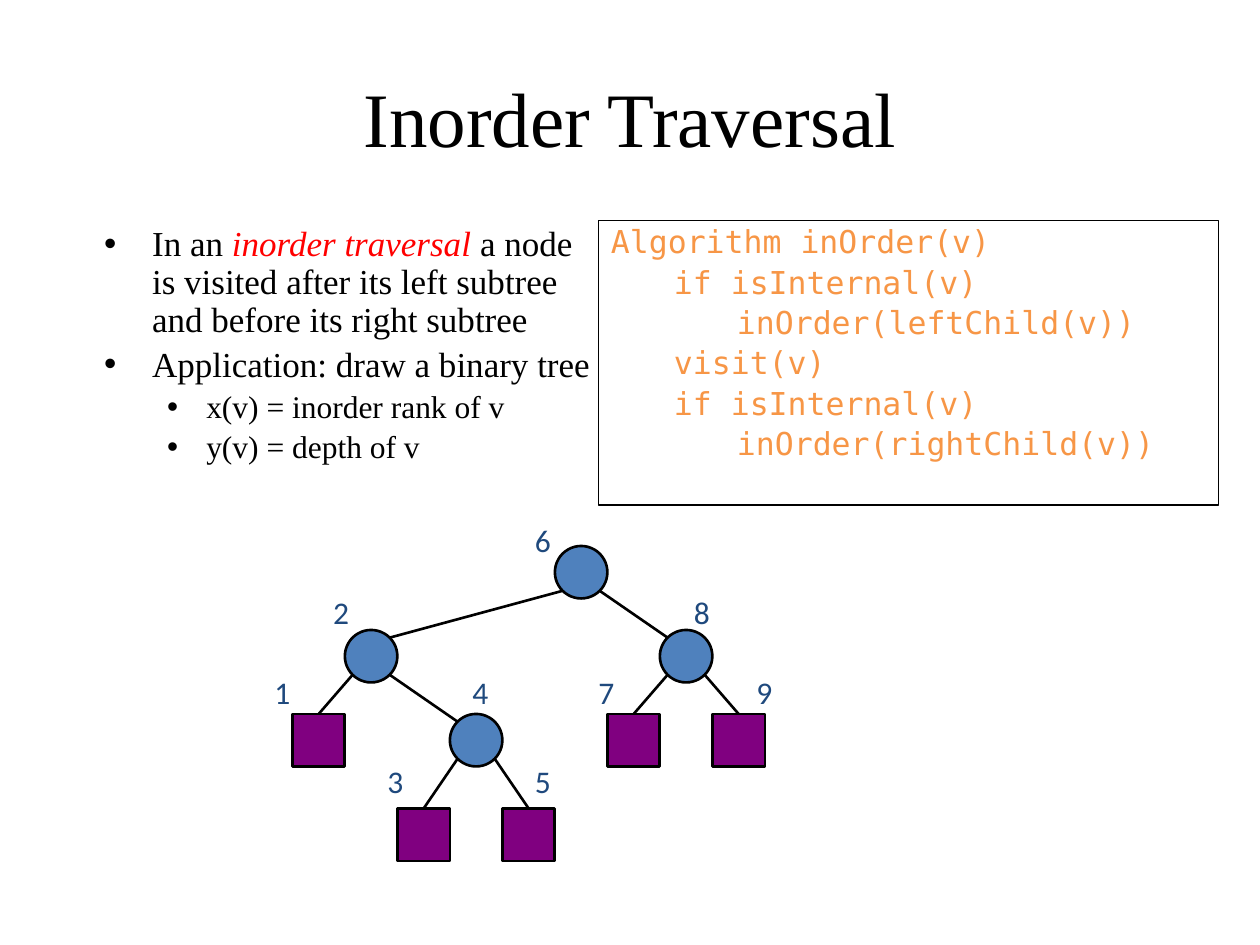
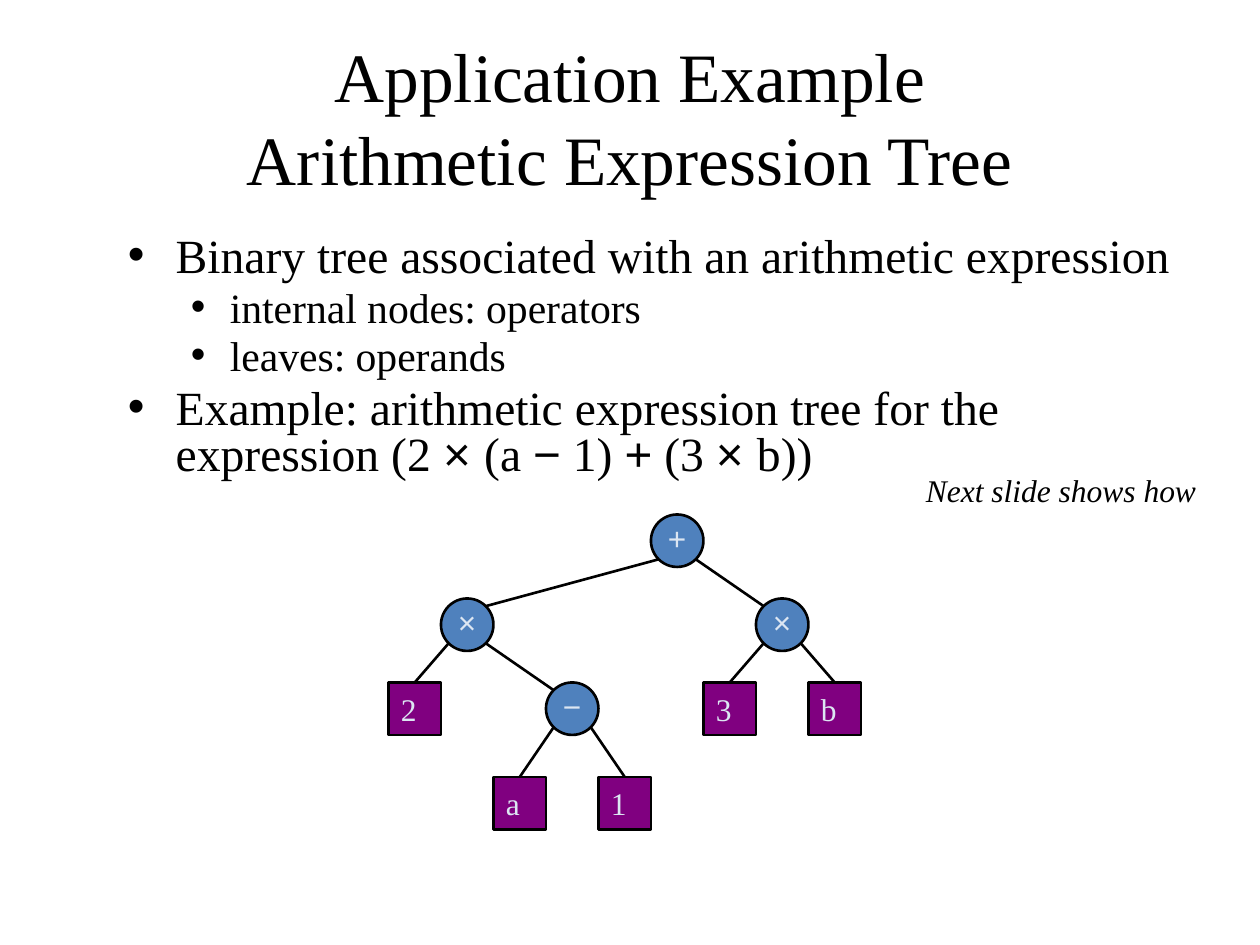
from dataclasses import dataclass
from math import sqrt

from lxml.etree import SubElement
from pptx import Presentation
from pptx.dml.color import RGBColor
from pptx.enum.shapes import MSO_CONNECTOR, MSO_SHAPE
from pptx.enum.text import MSO_ANCHOR, PP_ALIGN
from pptx.oxml.ns import qn
from pptx.util import Emu, Inches, Pt


@dataclass(frozen=True)
class Theme:
    ink: str = "000000"
    accent: str = "FF0000"
    code: str = "F79646"
    operator: str = "4F81BD"
    leaf: str = "800080"
    rank: str = "1F497D"
    symbol: str = "DCE6F2"
    serif: str = "Times New Roman"
    sans: str = "Arial"
    mono: str = "DejaVu Sans Mono"
    label_font: str = "Calibri"
    small: float = 18
    thin: float = 0.75
    thick: float = 1.5


THEME = Theme()
COLUMNS = 24
SLIDE_WIDTH, SLIDE_HEIGHT = Inches(10), Inches(7.5)
CELL = SLIDE_WIDTH / COLUMNS  # one tree node fills one square cell

# (inorder rank, left subtree, right subtree); a bare number is a leaf
TREE = (6, (2, 1, (4, 3, 5)), (8, 7, 9))
DEPTH_ROWS = (0, 1.6, 3.2, 5)
RANK_SHIFTS = (-0.58, -0.46, -0.43, 0.19, 0.38, -0.62, -0.41, 0.41, 0.6)
RANK_RISES = (0.6, 0.82, 0.9, 1)
BULLET_INDENTS = ((0.38, -0.38), (0.81, -0.31))


def cells(*counts):
    return [Emu(round(count * CELL)) for count in counts]


def apply_format(target, values):
    for name, value in values.items():
        setattr(target, name, value)


def set_outline(line, width):
    line.color.rgb = RGBColor.from_string(THEME.ink)
    line.width = Pt(width)


def add_run(paragraph, text, size, font=THEME.serif, color=THEME.ink, italic=False):
    run = paragraph.add_run()
    run.text = text
    apply_format(run.font, {"size": Pt(size), "name": font, "italic": italic})
    run.font.color.rgb = RGBColor.from_string(color)


def add_text_box(slide, box, **frame_format):
    frame = slide.shapes.add_textbox(*cells(*box)).text_frame
    apply_format(frame, {"word_wrap": True, **frame_format})
    return frame


def add_title(slide, lines, size):
    frame = add_text_box(slide, (1.2, 0.72, 21.6, 3), vertical_anchor=MSO_ANCHOR.MIDDLE)
    paragraph = frame.paragraphs[0]
    paragraph.alignment = PP_ALIGN.CENTER
    for number, line in enumerate(lines):
        if number:
            paragraph.add_line_break()
        add_run(paragraph, line, size)


def next_paragraph(frame, number, size, spacing):
    paragraph = frame.add_paragraph() if number else frame.paragraphs[0]
    apply_format(paragraph, {"line_spacing": spacing, "space_before": Pt(round(size * 0.2, 1)),
                             "alignment": PP_ALIGN.LEFT})
    return paragraph


def set_indent(paragraph, margin, first_line=0, bullet=None):
    properties = paragraph._p.get_or_add_pPr()
    properties.set("marL", str(Inches(margin)))
    properties.set("indent", str(Inches(first_line)))
    if bullet:
        SubElement(properties, qn("a:buFont")).set("typeface", THEME.sans)
        SubElement(properties, qn("a:buChar")).set("char", bullet)


def add_bullets(slide, box, items, sizes, spacing):
    """Each item is a level and its runs; a run is a text and its font changes."""
    frame = add_text_box(slide, box)
    for number, (level, runs) in enumerate(items):
        paragraph = next_paragraph(frame, number, sizes[level], spacing)
        paragraph.level = level
        set_indent(paragraph, *BULLET_INDENTS[level], bullet="•")
        for text, changes in runs:
            add_run(paragraph, text, sizes[level], **changes)


def add_code(slide, box, lines):
    shape = slide.shapes.add_shape(MSO_SHAPE.RECTANGLE, *cells(*box))
    shape.shadow.inherit = False
    shape.fill.background()
    set_outline(shape.line, THEME.thin)
    frame = shape.text_frame
    apply_format(frame, {"word_wrap": True, "vertical_anchor": MSO_ANCHOR.TOP})
    for number, (level, text) in enumerate(lines):
        paragraph = next_paragraph(frame, number, THEME.small, 0.9)
        paragraph.level = level
        set_indent(paragraph, level * 0.5)
        add_run(paragraph, text, THEME.small, THEME.mono, THEME.code)


def add_node(slide, column, row, is_leaf, symbol):
    kind = MSO_SHAPE.RECTANGLE if is_leaf else MSO_SHAPE.OVAL
    shape = slide.shapes.add_shape(kind, *cells(column, row, 1, 1))
    shape.shadow.inherit = False
    shape.fill.solid()
    shape.fill.fore_color.rgb = RGBColor.from_string(THEME.leaf if is_leaf else THEME.operator)
    set_outline(shape.line, THEME.thick)
    if symbol:
        frame = shape.text_frame
        apply_format(frame, {"word_wrap": False, "vertical_anchor": MSO_ANCHOR.MIDDLE})
        if not is_leaf:
            apply_format(frame, {"margin_left": 0, "margin_right": 0, "margin_top": 0,
                                 "margin_bottom": Inches(0.05)})
        paragraph = frame.paragraphs[0]
        paragraph.alignment = PP_ALIGN.LEFT if is_leaf else PP_ALIGN.CENTER
        add_run(paragraph, symbol, THEME.small,
                THEME.serif if is_leaf else THEME.sans, THEME.symbol)
    return shape


def add_edge(slide, parent, child, child_is_leaf):
    """Joins the parent's lower diagonal to the child's upper diagonal or top."""
    reach = parent.width / 2 / sqrt(2)
    side = 1 if child.left > parent.left else -1

    def diagonal(node, across, down):
        return (round(node.left + node.width / 2 + across * reach),
                round(node.top + node.height / 2 + down * reach))

    edge = slide.shapes.add_connector(
        MSO_CONNECTOR.STRAIGHT, *diagonal(parent, side, 1), *diagonal(child, -side, -1))
    if child_is_leaf:
        edge.end_connect(child, 0)
    set_outline(edge.line, THEME.thick)
    SubElement(edge._element.spPr, qn("a:effectLst"))


def add_rank(slide, rank, column, row, depth):
    box = (column + RANK_SHIFTS[rank - 1], row - RANK_RISES[depth], 0.84, 1.06)
    frame = add_text_box(slide, box, word_wrap=False)
    add_run(frame.paragraphs[0], str(rank), THEME.small, THEME.label_font, THEME.rank)


def draw_tree(slide, left, top, symbols=None, tree=TREE, depth=0):
    """Places each node at x = inorder rank, y = depth; shows symbols or ranks."""
    is_leaf = isinstance(tree, int)
    rank, *subtrees = (tree,) if is_leaf else tree
    column, row = left + rank - 1, top + DEPTH_ROWS[depth]
    node = add_node(slide, column, row, is_leaf, symbols and symbols[rank - 1])
    if not symbols:
        add_rank(slide, rank, column, row, depth)
    for subtree in subtrees:
        child = draw_tree(slide, left, top, symbols, subtree, depth + 1)
        add_edge(slide, node, child, isinstance(subtree, int))
    return node


def build_traversal_slide(slide):
    add_title(slide, ["Inorder Traversal"], 44)
    add_bullets(slide, (1.75, 4.2, 9.84, 6.8), [
        (0, [("In an ", {}),
             ("inorder traversal ", {"color": THEME.accent, "italic": True}),
             ("a node is visited after its left subtree and before its right subtree", {})]),
        (0, [("Application: draw a binary tree", {})]),
        (1, [("x(v) = inorder rank of v", {})]),
        (1, [("y(v) = depth of v", {})]),
    ], sizes=(20, 18), spacing=0.9)
    add_code(slide, (11.4, 4.2, 11.81, 5.42), [
        (0, "Algorithm inOrder(v)"),
        (1, "if isInternal(v)"),
        (2, "inOrder(leftChild(v))"),
        (1, "visit(v)"),
        (1, "if isInternal(v)"),
        (2, "inOrder(rightChild(v))"),
    ])
    draw_tree(slide, 5.57, 10.4)


def build_expression_slide(slide):
    add_title(slide, ["Application Example", "Arithmetic Expression Tree"], 39.6)
    sign = {"font": THEME.sans}
    add_bullets(slide, (2.2, 4.4, 20.4, 5), [
        (0, [("Binary tree associated with an arithmetic expression", {})]),
        (1, [("internal nodes: operators", {})]),
        (1, [("leaves: operands", {})]),
        (0, [("Example: arithmetic expression tree for the expression (2 ", {}),
             ("× ", sign), ("(a ", {}), ("−", sign), (" 1) ", {}), ("+", sign),
             (" (3 ", {}), ("× ", sign), ("b))", {})]),
    ], sizes=(27.2, 23.8), spacing=0.8)
    draw_tree(slide, 7.4, 9.8, symbols="2×a−1+3×b")
    note = add_text_box(slide, (17.4, 8.86, 5.81, 0.96), word_wrap=False)
    add_run(note.paragraphs[0], "Next slide shows how", THEME.small, italic=True)


def main():
    presentation = Presentation()
    apply_format(presentation, {"slide_width": SLIDE_WIDTH, "slide_height": SLIDE_HEIGHT})
    blank = presentation.slide_layouts[6]
    for build in (build_traversal_slide, build_expression_slide):
        build(presentation.slides.add_slide(blank))
    presentation.save("out.pptx")


if __name__ == "__main__":
    main()
